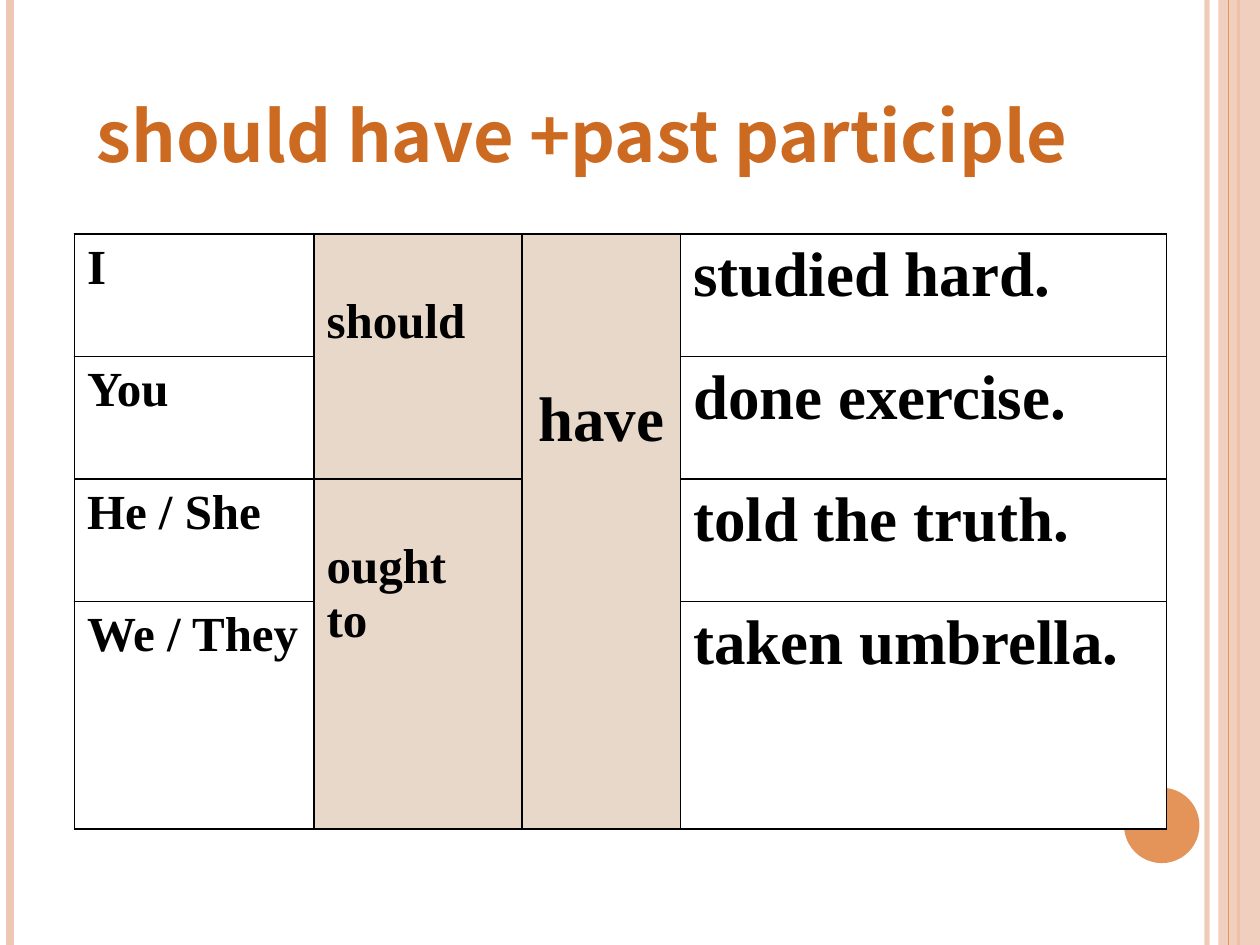
"""Build a grammar slide on should have + past participle."""
from pptx import Presentation
from pptx.dml.color import RGBColor as Rgb
from pptx.enum.shapes import MSO_CONNECTOR as Conn, MSO_SHAPE as Kind
from pptx.enum.text import MSO_ANCHOR as Anchor, PP_ALIGN as Align
from pptx.oxml import parse_xml
from pptx.oxml.ns import nsdecls
from pptx.util import Cm, Pt

PEACH, AMBER, SAND, WHITE, BLACK = "EFC8B5", "E49458", "E8D8CA", "FFFFFF", "000000"
TALL = 19.05
SERIF = "Times New Roman"
SMALL = {"size": Pt(28), "bold": True, "name": SERIF}
LARGE = {**SMALL, "size": Pt(36)}
HEAD = {"size": Pt(40), "bold": True, "name": "Noto Sans CJK KR"}
WIDTHS = [4.83, 4.19, 3.2, 9.8]
HEIGHTS = [2.47, 2.47, 2.47, 4.46]
ROWS = [
    ("I", "studied hard."),
    ("You", "done exercise."),
    ("He / She", "told the truth."),
    ("We / They", "taken umbrella."),
]


def paint(fill, color, alpha=100):
    """Fill with a solid colour, see-through when alpha is below 100."""
    fill.solid()
    fill.fore_color.rgb = Rgb.from_string(color)
    if alpha < 100:
        for tone in fill._xPr.xpath(".//a:srgbClr"):
            tone.append(parse_xml(f'<a:alpha {nsdecls("a")} val="{alpha * 1000}"/>'))


def style(item, values):
    """Set each named attribute on the item."""
    for key, value in values.items():
        setattr(item, key, value)


def write(frame, text, font, color, align=Align.LEFT):
    """Put one styled paragraph in a text frame."""
    para = frame.paragraphs[0]
    para.alignment = align
    run = para.add_run()
    run.text = text
    style(run.font, font)
    run.font.color.rgb = Rgb.from_string(color)


def stripe(slide, x, color, width, alpha=100):
    """Draw a line down the full height of the slide."""
    line = slide.shapes.add_connector(Conn.STRAIGHT, Cm(x), Cm(0), Cm(x), Cm(TALL))
    line.line.width = Pt(width)
    paint(line.line.fill, color, alpha)
    line._element.spPr.append(parse_xml(f'<a:effectLst {nsdecls("a")}/>'))


def block(slide, kind, box, color, alpha=100):
    """Draw a plain shape without outline."""
    shape = slide.shapes.add_shape(kind, *map(Cm, box))
    shape.shadow.inherit = False
    shape.line.fill.background()
    paint(shape.fill, color, alpha)


def title(slide, text):
    """Add the heading."""
    frame = slide.shapes.add_textbox(*map(Cm, (1.7, 1.73, 21.26, 1.96))).text_frame
    style(frame, {"word_wrap": True, "vertical_anchor": Anchor.MIDDLE})
    write(frame, text, HEAD, "CC6A21")


def frame_cell(cell, color):
    """Give a cell thin black borders and a fill."""
    props = cell._tc.get_or_add_tcPr()
    for side in "LRTB":
        props.append(parse_xml(
            f'<a:ln{side} {nsdecls("a")} w="12700"><a:solidFill>'
            f'<a:srgbClr val="{BLACK}"/></a:solidFill></a:ln{side}>'))
    paint(cell.fill, color)


def grid(slide):
    """Add the table with its merged middle columns."""
    box = map(Cm, (1.5, 4.72, sum(WIDTHS), sum(HEIGHTS)))
    table = slide.shapes.add_table(len(HEIGHTS), len(WIDTHS), *box).table
    style(table, {"first_row": False, "horz_banding": False})
    for col, width in zip(table.columns, WIDTHS):
        col.width = Cm(width)
    for row, height in zip(table.rows, HEIGHTS):
        row.height = Cm(height)
        for col, cell in enumerate(row.cells):
            frame_cell(cell, SAND if col in (1, 2) else WHITE)
    for row, (who, deed) in enumerate(ROWS):
        write(table.cell(row, 0).text_frame, who, SMALL, BLACK)
        write(table.cell(row, 3).text_frame, deed, LARGE, BLACK)
    merged = [
        (0, 1, 1, "should", SMALL, Align.LEFT, {"margin_top": Cm(1.22)}),
        (2, 1, 3, "ought to", SMALL, Align.LEFT,
         {"margin_top": Cm(1.22), "margin_right": Cm(0.8)}),
        (0, 2, 3, "have", LARGE, Align.CENTER, {"margin_top": Cm(3.05)}),
    ]
    for top, col, end, text, font, align, pads in merged:
        cell = table.cell(top, col)
        cell.merge(table.cell(end, col))
        style(cell, pads)
        write(cell.text_frame, text, font, BLACK, align)


def main():
    """Build and save the slide."""
    deck = Presentation()
    style(deck, {"slide_width": Cm(25.4), "slide_height": Cm(TALL)})
    slide = deck.slides.add_slide(deck.slide_layouts[6])
    stripe(slide, 24.33, PEACH, 3, 93)
    stripe(slide, 0.21, PEACH, 4.5)
    stripe(slide, 24.97, AMBER, 1.5)
    block(slide, Kind.RECTANGLE, (24.56, 0, 0.84, TALL), PEACH, 87)
    stripe(slide, 24.77, AMBER, 0.75)
    block(slide, Kind.OVAL, (22.66, 15.88, 1.52, 1.52), AMBER)
    grid(slide)
    title(slide, "should have +past participle")
    deck.save("out.pptx")


if __name__ == "__main__":
    main()
